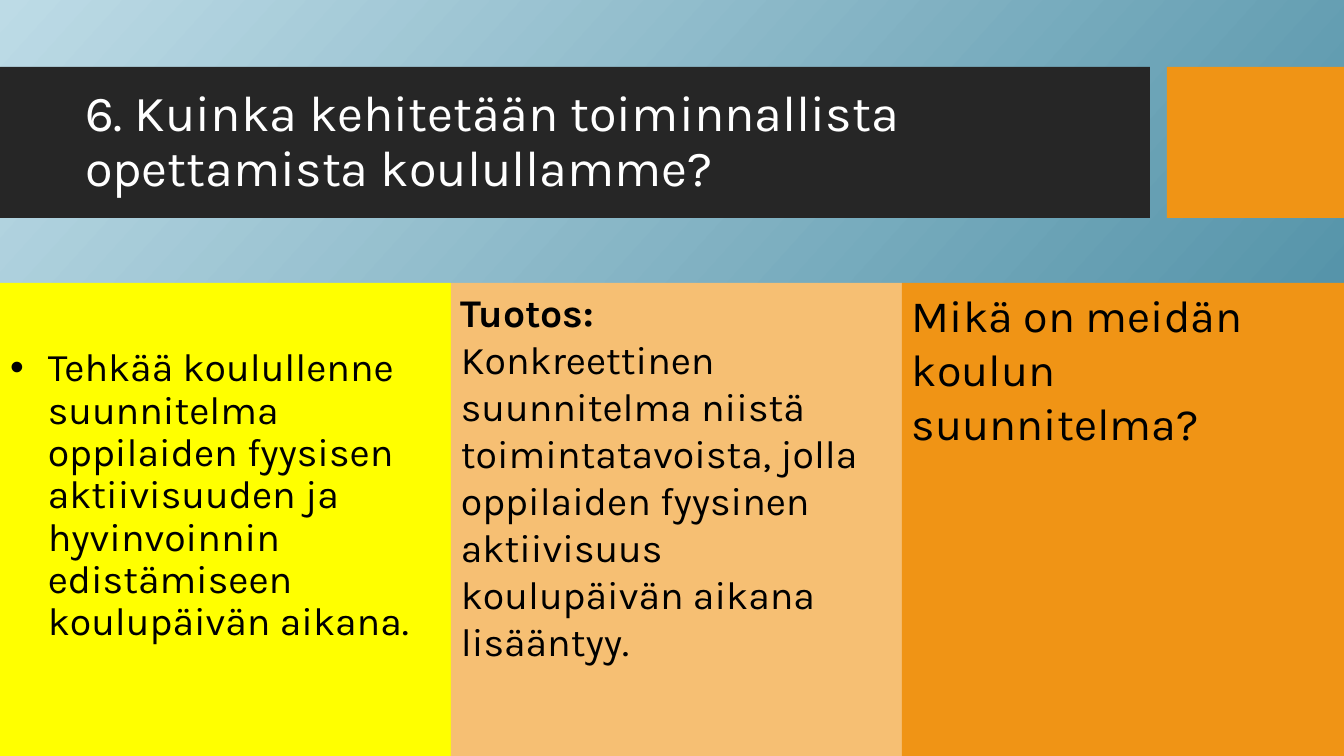
from lxml.etree import SubElement
from pptx import Presentation
from pptx.dml.color import RGBColor
from pptx.enum.shapes import MSO_SHAPE
from pptx.enum.text import MSO_ANCHOR, MSO_AUTO_SIZE, PP_ALIGN
from pptx.oxml.ns import qn
from pptx.util import Pt

PX = 12192000 / 1344  # EMU per px
FONT = "Karla"
WHITE = RGBColor(0xFF, 0xFF, 0xFF)
BLACK = RGBColor(0x00, 0x00, 0x00)
CHARCOAL = RGBColor(0x26, 0x26, 0x26)
ORANGE = RGBColor(0xF0, 0x94, 0x15)
PEACH = RGBColor(0xF6, 0xBF, 0x73)
YELLOW = RGBColor(0xFF, 0xFF, 0x00)
PALE_BLUE = RGBColor(0xBD, 0xDB, 0xE6)
DEEP_BLUE = RGBColor(0x3A, 0x81, 0x99)


def add_panel(left, top, width, height, color):
    panel = slide.shapes.add_shape(
        MSO_SHAPE.RECTANGLE, *(round(v * PX) for v in (left, top, width, height)))
    panel.shadow.inherit = False
    panel.fill.solid()
    panel.fill.fore_color.rgb = color
    panel.line.fill.background()
    return panel


def write(shape, lines, size, color, spacing=1.0, anchor=MSO_ANCHOR.TOP, top_inset=5):
    frame = shape.text_frame
    frame.word_wrap = True
    frame.auto_size = MSO_AUTO_SIZE.NONE
    frame.vertical_anchor = anchor
    frame.margin_left = frame.margin_right = round(10 * PX)
    frame.margin_top, frame.margin_bottom = round(top_inset * PX), round(5 * PX)
    frame.text = "\n".join(lines)
    for paragraph in frame.paragraphs:
        paragraph.alignment = PP_ALIGN.LEFT
        paragraph.line_spacing = spacing
        paragraph.space_before = Pt(0)
        paragraph.font.name = FONT
        paragraph.font.size = Pt(size)
        paragraph.font.color.rgb = color


prs = Presentation()
prs.slide_width, prs.slide_height = round(1344 * PX), round(756 * PX)
slide = prs.slides.add_slide(prs.slide_layouts[1])
title, task = slide.placeholders

# Background gradient, running down to the right
backdrop = slide.background.fill
backdrop.gradient()
backdrop.gradient_angle = 318
for stop, color in zip(backdrop.gradient_stops, (PALE_BLUE, DEEP_BLUE)):
    stop.color.rgb = color

# Title on its dark band, with an orange block beside it
for left, width, color in ((0, 1150, CHARCOAL), (1167, 177, ORANGE)):
    band = add_panel(left, 67, width, 151, color)
    title.element.addprevious(band.element)
title.left, title.top, title.width, title.height = (
    round(v * PX) for v in (75, 83, 1059, 119))
write(title, ["6. Kuinka kehitetään toiminnallista opettamista koulullamme?"],
      36, WHITE, spacing=0.9, anchor=MSO_ANCHOR.MIDDLE)

# Task column
COLUMN_TOP, COLUMN_WIDTH, COLUMN_HEIGHT = 283, 451, 473
task.left, task.top, task.width, task.height = (
    round(v * PX) for v in (0, COLUMN_TOP, COLUMN_WIDTH, COLUMN_HEIGHT))
task.fill.solid()
task.fill.fore_color.rgb = YELLOW
task_format = task.text_frame.paragraphs[0]._p.get_or_add_pPr()
task_format.set("marL", "0")
task_format.set("indent", "0")
SubElement(task_format, qn("a:buNone"))
write(task, ["Tehkää koulullenne suunnitelma oppilaiden fyysisen aktiivisuuden "
             "ja hyvinvoinnin edistämiseen koulupäivän aikana."],
      28, BLACK, spacing=0.9, top_inset=65)

# Outcome and plan columns
outcome = add_panel(COLUMN_WIDTH, COLUMN_TOP, COLUMN_WIDTH, COLUMN_HEIGHT, PEACH)
write(outcome, ["Tuotos:",
                "Konkreettinen suunnitelma niistä toimintatavoista, jolla oppilaiden "
                "fyysinen aktiivisuus koulupäivän aikana lisääntyy."], 28, BLACK)
outcome.text_frame.paragraphs[0].font.bold = True

plan = add_panel(2 * COLUMN_WIDTH, COLUMN_TOP, 1344 - 2 * COLUMN_WIDTH, COLUMN_HEIGHT, ORANGE)
write(plan, ["Mikä on meidän koulun suunnitelma?"], 32, BLACK)

prs.save("out.pptx")
